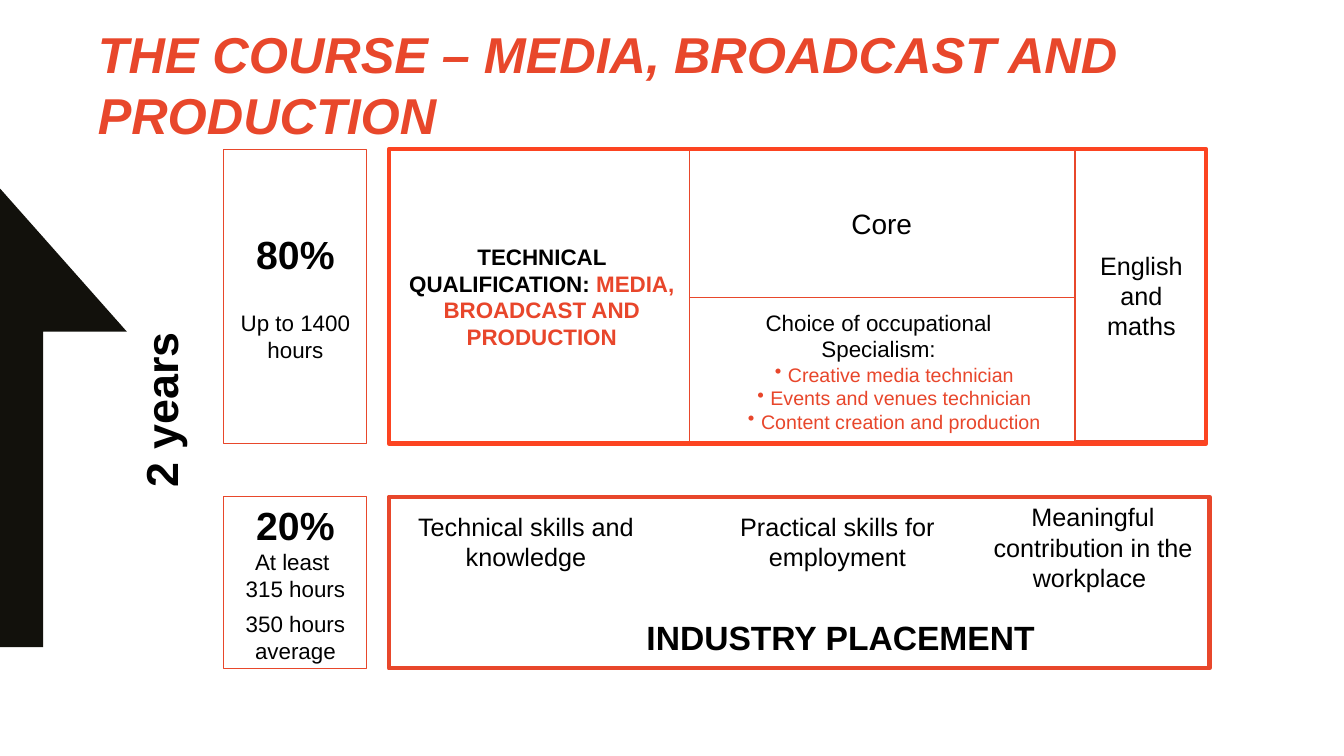
from dataclasses import dataclass

from lxml.etree import SubElement
from pptx import Presentation
from pptx.dml.color import RGBColor
from pptx.enum.shapes import MSO_SHAPE
from pptx.enum.text import MSO_ANCHOR, PP_ALIGN
from pptx.oxml.ns import qn
from pptx.util import Cm, Pt


@dataclass(frozen=True)
class Theme:
    font: str = "Arial"
    ink: str = "000000"
    red: str = "E8472B"
    accent: str = "E8462B"
    frame: str = "FC4421"
    arrow: str = "12110C"
    paper: str = "FFFFFF"
    title: int = 36
    years: int = 32
    share: int = 28
    placement: int = 24
    core: int = 20
    label: int = 18
    body: int = 16
    bullet: int = 14
    thin: float = 0.75
    thick: float = 3


@dataclass
class Line:
    """One paragraph; spans, if given, are (text, colour) pairs."""
    text: str
    size: int
    bold: bool = False
    color: str = Theme.ink
    before: int = 0
    after: int = 0
    bullet: bool = False
    spans: tuple = ()


class CourseSlide:
    def __init__(self, deck, theme):
        self.theme = theme
        self.page = deck.slides.add_slide(deck.slide_layouts[5])

    def style(self, font, size, color, bold=False, italic=False):
        font.name, font.size = self.theme.font, Pt(size)
        font.bold, font.italic = bold, italic
        font.color.rgb = RGBColor.from_string(color)

    def title(self, text, place):
        box = self.page.shapes.title
        box.left, box.top, box.width, box.height = map(Cm, place)
        box.text_frame.text = text
        box.text_frame.vertical_anchor = MSO_ANCHOR.TOP
        para = box.text_frame.paragraphs[0]
        para.alignment = PP_ALIGN.LEFT
        para.space_after = Pt(3)
        self.style(para.font, self.theme.title, self.theme.red, True, True)

    def fill_text(self, box, lines, anchor):
        frame = box.text_frame
        frame.word_wrap = True
        frame.vertical_anchor = anchor
        for index, line in enumerate(lines):
            para = frame.paragraphs[0] if index == 0 else frame.add_paragraph()
            para.alignment = PP_ALIGN.CENTER
            if line.before:
                para.space_before = Pt(line.before)
            if line.after:
                para.space_after = Pt(line.after)
            if line.bullet:
                props = para._p.get_or_add_pPr()
                props.set("marL", str(Cm(0.97)))
                props.set("indent", str(Cm(-0.33)))
                SubElement(props, qn("a:buChar")).set("char", "•")
            if line.spans:
                for text, color in line.spans:
                    span = para.add_run()
                    span.text = text
                    self.style(span.font, line.size, color, line.bold)
            else:
                para.text = line.text
                self.style(para.font, line.size, line.color, line.bold)

    def text(self, place, *lines, anchor=MSO_ANCHOR.TOP, rotation=0):
        box = self.page.shapes.add_textbox(*map(Cm, place))
        box.rotation = rotation
        self.fill_text(box, lines, anchor)

    def box(self, place, *lines, line=None, weight=Theme.thin, fill=None):
        box = self.page.shapes.add_shape(MSO_SHAPE.RECTANGLE, *map(Cm, place))
        box.shadow.inherit = False
        if fill:
            box.fill.solid()
            box.fill.fore_color.rgb = RGBColor.from_string(fill)
        else:
            box.fill.background()
        if line:
            box.line.color.rgb = RGBColor.from_string(line)
            box.line.width = Pt(weight)
        else:
            box.line.fill.background()
        if lines:
            self.fill_text(box, lines, MSO_ANCHOR.MIDDLE)

    def outline(self, points, fill):
        start, *rest = [(Cm(x), Cm(y)) for x, y in points]
        builder = self.page.shapes.build_freeform(*start)
        builder.add_line_segments(rest, close=True)
        shape = builder.convert_to_shape()
        shape.shadow.inherit = False
        shape.fill.solid()
        shape.fill.fore_color.rgb = RGBColor.from_string(fill)
        shape.line.fill.background()


def main():
    theme = Theme()
    deck = Presentation()
    deck.slide_width, deck.slide_height = Cm(33.87), Cm(19.05)
    slide = CourseSlide(deck, theme)

    # Arrow and title
    slide.outline([(1.09, 8.36), (3.2, 8.36), (0, 4.75), (0, 16.31), (1.09, 16.31)],
                  theme.arrow)
    slide.title("THE COURSE – MEDIA, BROADCAST AND PRODUCTION",
                (2.21, 0.46, 27.56, 1.68))

    # Shares of the course
    top, bottom = 3.78, 12.52
    slide.box((5.64, top, 3.61, 7.39),
              Line("80%", theme.share, True),
              Line("Up to 1400 hours", theme.body, before=23),
              line=theme.red)
    slide.box((5.64, bottom, 3.61, 4.32),
              Line("20%", theme.share, True),
              Line("At least ", theme.body),
              Line("315 hours", theme.body, after=6),
              Line("350 hours average", theme.body),
              line=theme.red)

    # Technical qualification
    slide.text((9.91, top, 7.49, 7.39),
               Line("", theme.body, True, spans=(
                   ("TECHNICAL QUALIFICATION: ", theme.ink),
                   ("MEDIA, BROADCAST AND PRODUCTION", theme.accent))),
               anchor=MSO_ANCHOR.MIDDLE)
    specialisms = ("Creative media technician", "Events and venues technician",
                   "Content creation and production")
    half = 3.71
    slide.box((17.37, top, 9.7, half), Line("Core", theme.core), line=theme.red)
    slide.box((17.37, top + half, 9.7, half),
              Line("Choice of occupational ", theme.body),
              Line("Specialism: ", theme.body),
              *(Line(name, theme.bullet, color=theme.accent, bullet=True)
                for name in specialisms),
              line=theme.red)
    slide.box((27.1, top, 3.33, 7.32), Line("English and maths", theme.label),
              line=theme.red)

    # Industry placement
    slide.text((9.8, 12.75, 6.91, 2.11),
               Line("Technical skills and knowledge", theme.label))
    slide.text((17.6, 12.75, 7.01, 2.06),
               Line("Practical skills for employment", theme.label))
    slide.box((9.88, 15.19, 22.61, 1.75),
              Line("INDUSTRY PLACEMENT", theme.placement, True), fill=theme.paper)

    # Duration and thick frames
    slide.text((-2.49, 9.73, 13.06, 1.19), Line("2 years", theme.years, True),
               anchor=MSO_ANCHOR.MIDDLE, rotation=270)
    slide.box((9.8, 3.76, 20.6, 7.42), line=theme.frame, weight=theme.thick)
    slide.box((9.8, bottom, 20.68, 4.32), line=theme.red, weight=theme.thick)
    slide.text((24.28, bottom, 6.53, 2.97),
               Line("Meaningful contribution in the workplace ", theme.label))

    deck.save("out.pptx")


if __name__ == "__main__":
    main()
